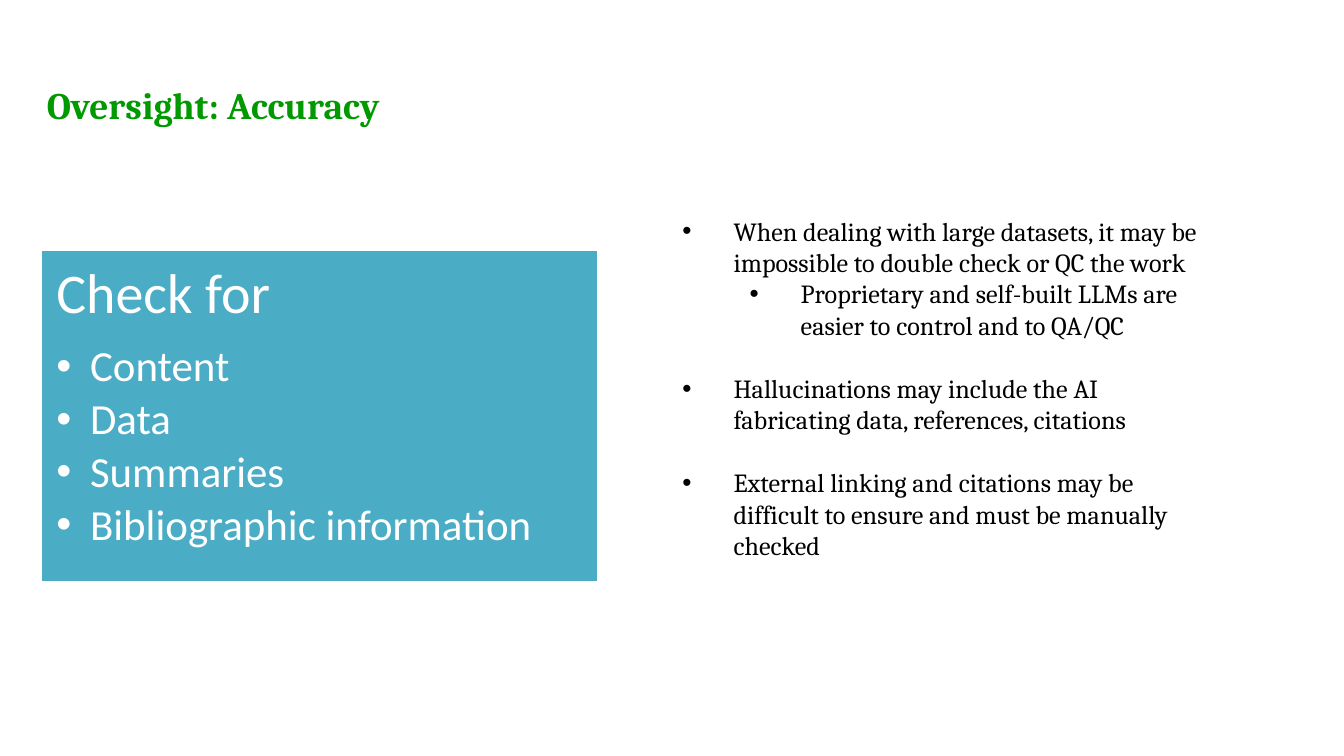
from lxml.etree import SubElement
from pptx import Presentation
from pptx.dml.color import RGBColor
from pptx.enum.shapes import MSO_SHAPE
from pptx.enum.text import MSO_ANCHOR, PP_ALIGN
from pptx.oxml.ns import qn
from pptx.util import Inches, Pt

TITLE = "Oversight: Accuracy"
HEAD = "Check for"
CHECKS = ["Content", "Data", "Summaries", "Bibliographic information"]
# (level, text, space before in points)
NOTES = [
    (0, "When dealing with large datasets, it may be impossible to double check or QC the work", 0),
    (1, "Proprietary and self-built LLMs are easier to control and to QA/QC", 0),
    (0, "Hallucinations may include the AI fabricating data, references, citations", 17),
    (0, "External linking and citations may be difficult to ensure and must be manually checked", 17),
]
WIDE = 10
HIGH = WIDE * 9 / 16
COL = 4.16  # width of both columns


def color(code):
    return RGBColor.from_string(code)


def set_up(frame, side=0.1, top=0.05, low=0.05):
    frame.word_wrap = True
    frame.vertical_anchor = MSO_ANCHOR.TOP
    frame.margin_left = frame.margin_right = Inches(side)
    frame.margin_top, frame.margin_bottom = Inches(top), Inches(low)
    return frame


def write(frame, text, size, font, ink, bold=False, level=0, left=0,
          hang=0, bullet=False, line=1.0, before=0, after=0):
    """Fill the frame's empty first paragraph, or add one below."""
    first = frame.paragraphs[0]
    para = frame.add_paragraph() if first.runs else first
    para.level, para.alignment = level, PP_ALIGN.LEFT
    para.line_spacing = line
    para.space_before, para.space_after = Pt(before), Pt(after)
    props = para._p.get_or_add_pPr()
    props.set("marL", str(Inches(left)))
    props.set("indent", str(Inches(-hang)))
    if bullet:
        SubElement(props, qn("a:buFont")).set("typeface", "Arial")
        SubElement(props, qn("a:buChar")).set("char", "•")
    run = para.add_run()
    run.text = text
    run.font.size, run.font.name, run.font.bold = Pt(size), font, bold
    run.font.color.rgb = color(ink)


deck = Presentation()
deck.slide_width, deck.slide_height = Inches(WIDE), Inches(HIGH)
slide = deck.slides.add_slide(deck.slide_layouts[6])
shapes = slide.shapes

title = shapes.add_textbox(*map(Inches, (0.25, 0.56, 7.17, 0.75)))
write(set_up(title.text_frame), TITLE, 20, "Cambria", "009900",
      bold=True, left=0.38, hang=0.38)

panel = shapes.add_shape(MSO_SHAPE.RECTANGLE, *map(Inches, (0.3, 1.85, COL, 2.49)))
panel.shadow.inherit = False
panel.fill.solid()
panel.fill.fore_color.rgb = color("4BACC6")
panel.line.color.rgb = color("FFFFFF")
panel.line.width = Pt(2)
frame = set_up(panel.text_frame, 0.12, 0.12, 0.12)
write(frame, HEAD, 30, "Calibri", "FFFFFF", line=0.9, after=10.5)
for item in CHECKS:
    write(frame, item, 23, "Calibri", "FFFFFF", level=1, left=0.25,
          hang=0.25, bullet=True, line=0.9, after=3.45)

notes = shapes.add_textbox(*map(Inches, (4.98, 1.32, COL, 3.31)))
frame = set_up(notes.text_frame, top=0.28)
for level, text, gap in NOTES:
    write(frame, text, 14, "Cambria", "000000", level=level,
          left=0.38 + level * 0.5, hang=0.38, bullet=True, before=gap)

deck.save("out.pptx")
